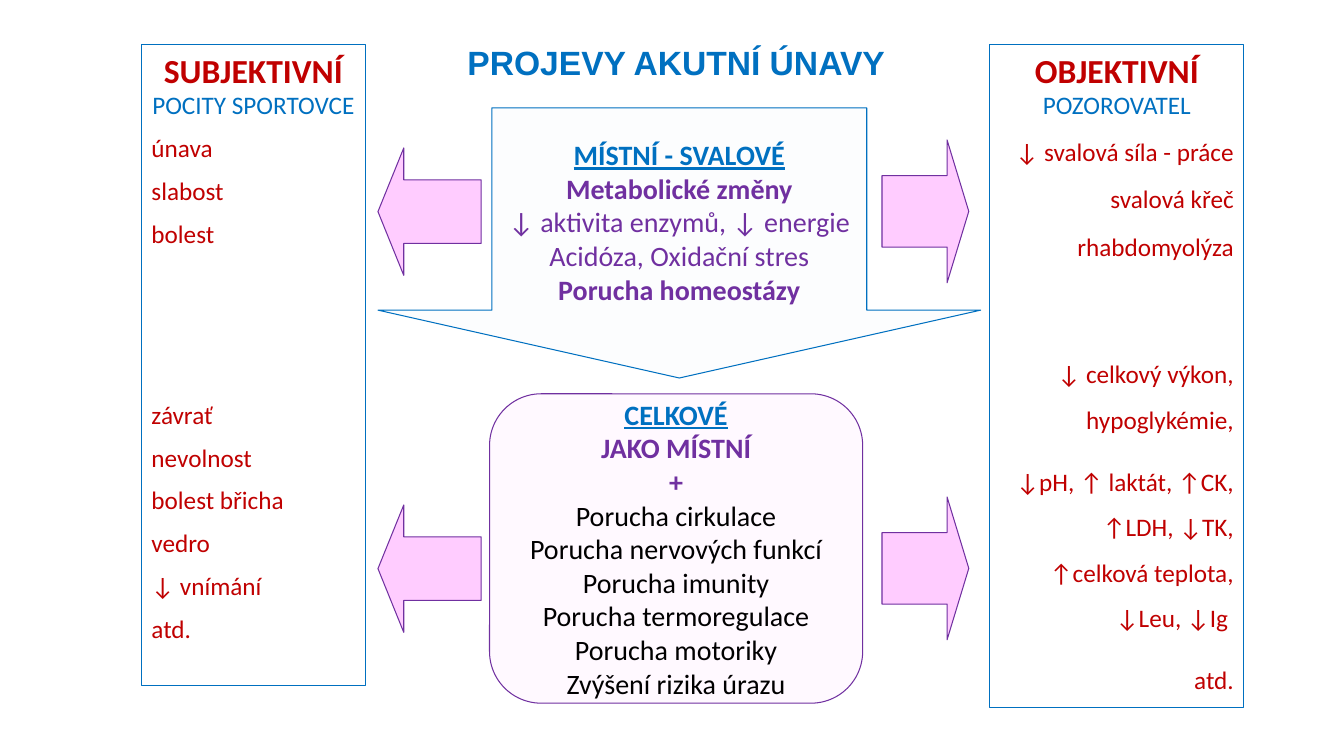
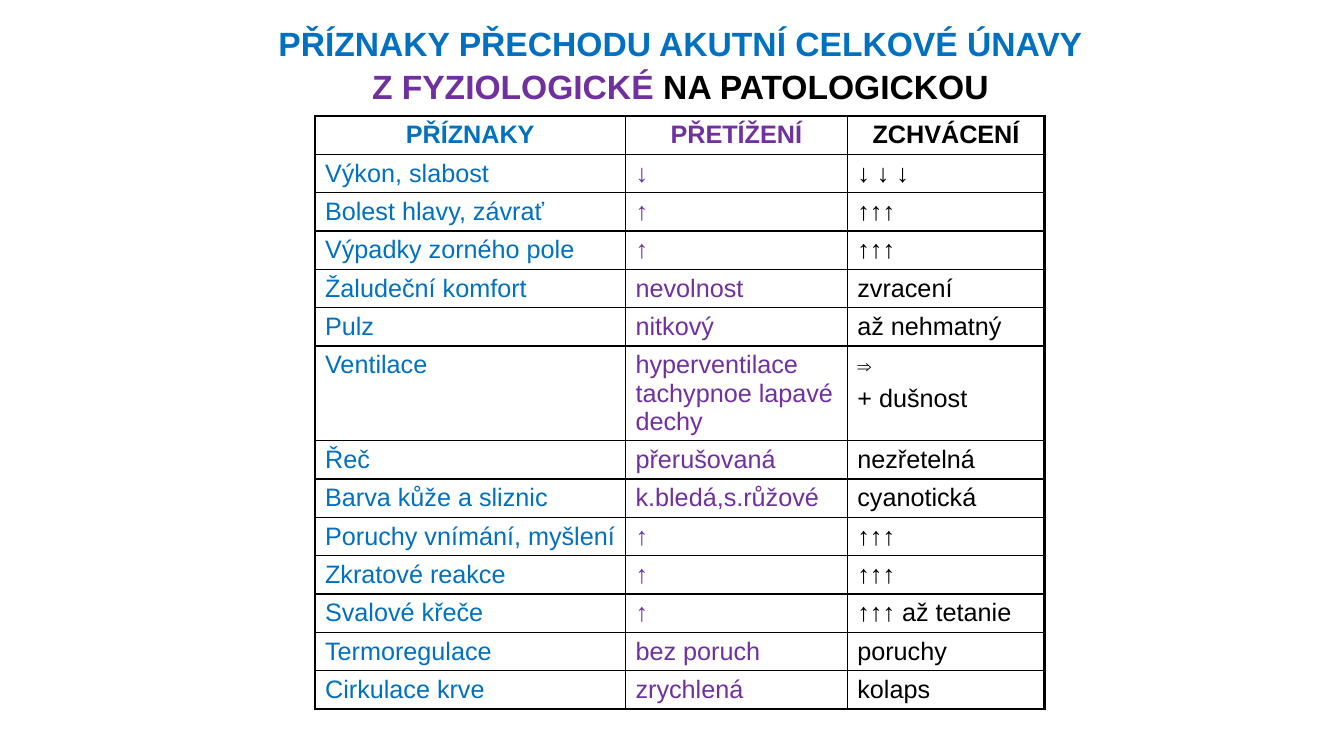
"""Build two slides on the signs of acute fatigue."""
from lxml import etree
from pptx import Presentation
from pptx.dml.color import RGBColor
from pptx.enum import shapes, text
from pptx.oxml.ns import qn
from pptx.util import Pt

COLORS = {"blue": "0070C0", "red": "C00000", "purple": "7030A0", "black": "000000",
          "pink": "FFCCFF", "ice": "DEEBF7"}
RGB = {name: RGBColor.from_string(value) for name, value in COLORS.items()}
LEFT, CENTER, RIGHT = text.PP_ALIGN.LEFT, text.PP_ALIGN.CENTER, text.PP_ALIGN.RIGHT


def style(paragraph, size, color, bold=False, font="Calibri", align=CENTER, before=0, spacing=1.0):
    paragraph.alignment = align
    paragraph.space_before, paragraph.space_after = Pt(before), Pt(0)
    paragraph.line_spacing = spacing
    for run in paragraph.runs:
        run.font.name, run.font.size, run.font.bold = font, Pt(size), bold
        run.font.color.rgb = RGB[color]


def place(shape, left, top, width, height):
    shape.left, shape.top, shape.width, shape.height = Pt(left), Pt(top), Pt(width), Pt(height)
    shape.text_frame.word_wrap = True
    shape.text_frame.auto_size = text.MSO_AUTO_SIZE.NONE
    return shape.text_frame


deck = Presentation()
deck.slide_width, deck.slide_height = Pt(960), Pt(540)

fatigue = deck.slides.add_slide(deck.slide_layouts[3])
heading, subjective, objective = fatigue.placeholders

title = place(heading, 312, 28, 342, 32)
title.text = "PROJEVY AKUTNÍ ÚNAVY"
style(title.paragraphs[0], 24, "blue", True, "Arial")

panels = [
    (subjective, (101, 31.7, 160, 458), LEFT, [
        ("SUBJEKTIVNÍ", 0, 1), ("POCITY SPORTOVCE", 0, 1),
        ("únava", 9, 1), ("slabost", 9, 1), ("bolest", 9, 1),
        ("závrať", 107.5, 1), ("nevolnost", 9, 1), ("bolest břicha", 9, 1),
        ("vedro", 9, 1), ("↓ vnímání", 9, 1), ("atd.", 9, 1)]),
    (objective, (707, 31.7, 181.5, 474), RIGHT, [
        ("OBJEKTIVNÍ", 0, 1), ("POZOROVATEL", 0, 1),
        ("↓ svalová síla - práce", 12, 1), ("svalová křeč", 12, 1), ("rhabdomyolýza", 12, 1),
        ("↓ celkový výkon, hypoglykémie,", 59, 1.5),
        ("↓pH, ↑ laktát, ↑CK, ↑LDH, ↓TK, ↑celková teplota, ↓Leu, ↓Ig ", 12, 1.5),
        ("atd.", 12, 1.5)]),
]
for panel, box, align, signs in panels:
    frame = place(panel, *box)
    panel.line.color.rgb, panel.line.width = RGB["blue"], Pt(0.75)
    frame.text = "\n".join(sign for sign, before, spacing in signs)
    for row, (paragraph, (sign, before, spacing)) in enumerate(zip(frame.paragraphs, signs)):
        style(paragraph, 24 if row == 0 else 18, "blue" if row == 1 else "red", row == 0,
              align=CENTER if row < 2 else align, before=before, spacing=spacing)
        props = paragraph._p.get_or_add_pPr()
        props.set("marL", "0")
        props.set("indent", "0")
        etree.SubElement(props, qn("a:buNone"))

causes = [
    (shapes.MSO_SHAPE.DOWN_ARROW, (270, 77, 430.5, 193), (0.622, 0.251), "ice", 8, "blue", [
        ("MÍSTNÍ - SVALOVÉ", "blue", True), ("Metabolické změny", "purple", True),
        ("↓ aktivita enzymů, ↓ energie", "purple", False),
        ("Acidóza, Oxidační stres", "purple", False), ("Porucha homeostázy", "purple", True)]),
    (shapes.MSO_SHAPE.ROUNDED_RECTANGLE, (349.7, 281.3, 266.5, 221), (0.167,), "pink", 10, "purple", [
        ("CELKOVÉ", "blue", True), ("JAKO MÍSTNÍ", "purple", True), ("+", "purple", True),
        ("Porucha cirkulace", "black", False), ("Porucha nervových funkcí", "black", False),
        ("Porucha imunity", "black", False), ("Porucha termoregulace", "black", False),
        ("Porucha motoriky", "black", False), ("Zvýšení rizika úrazu", "black", False)]),
]
effects = [(kind, (left, top + shift, width, height), (0.5, 0.25), "pink", 100, "purple", [])
           for kind, left, top, width, height in [
               (shapes.MSO_SHAPE.LEFT_ARROW, 270, 105.7, 73.7, 91),
               (shapes.MSO_SHAPE.RIGHT_ARROW, 630, 100, 62, 102)]
           for shift in (0, 255)]
for kind, box, adjustments, fill, opacity, outline, lines in causes + effects:
    block = fatigue.shapes.add_shape(kind, *map(Pt, box))
    block.shadow.inherit = False
    for index, value in enumerate(adjustments):
        block.adjustments[index] = value
    block.fill.solid()
    block.fill.fore_color.rgb = RGB[fill]
    if opacity < 100:
        tint = block._element.spPr.find(f"{qn('a:solidFill')}/{qn('a:srgbClr')}")
        etree.SubElement(tint, qn("a:alpha"), val=str(opacity * 1000))
    block.line.color.rgb, block.line.width = RGB[outline], Pt(0.75)
    if lines:
        frame = block.text_frame
        frame.word_wrap = False
        frame.vertical_anchor = text.MSO_ANCHOR.MIDDLE
        frame.text = "\n".join(line for line, color, bold in lines)
        for paragraph, (line, color, bold) in zip(frame.paragraphs, lines):
            style(paragraph, 20, color, bold)
        frame.paragraphs[0].runs[0].font.underline = True

transition = deck.slides.add_slide(deck.slide_layouts[5])
title = place(transition.shapes.title, 168.5, 15, 635, 62.6)
title.text = "PŘÍZNAKY PŘECHODU AKUTNÍ CELKOVÉ ÚNAVY\nZ FYZIOLOGICKÉ "
title.paragraphs[1].add_run().text = "NA PATOLOGICKOU"
for paragraph, color, before in zip(title.paragraphs, ("blue", "purple"), (0, 2)):
    style(paragraph, 24, color, True, "Arial", before=before)
title.paragraphs[1].runs[1].font.color.rgb = RGB["black"]

symptoms = [
    ("PŘÍZNAKY", "PŘETÍŽENÍ", "ZCHVÁCENÍ"),
    ("Výkon, slabost", "↓", "↓ ↓ ↓"),
    ("Bolest hlavy, závrať", "↑", "↑↑↑"),
    ("Výpadky zorného pole", "↑", "↑↑↑"),
    ("Žaludeční komfort", "nevolnost", "zvracení"),
    ("Pulz", "nitkový", "až nehmatný"),
    ("Ventilace", "hyperventilace tachypnoe lapavé dechy", "⇒\n+ dušnost"),
    ("Řeč", "přerušovaná", "nezřetelná"),
    ("Barva kůže a sliznic", "k.bledá,s.růžové", "cyanotická"),
    ("Poruchy vnímání, myšlení", "↑", "↑↑↑"),
    ("Zkratové reakce", "↑", "↑↑↑"),
    ("Svalové křeče", "↑", "↑↑↑ až tetanie"),
    ("Termoregulace", "bez poruch", "poruchy"),
    ("Cirkulace krve", "zrychlená", "kolaps"),
]
widths = (221.8, 158.4, 141.1)
last_row, last_column = len(symptoms) - 1, len(widths) - 1
table = transition.shapes.add_table(len(symptoms), len(widths), Pt(225), Pt(82.8),
                                    Pt(sum(widths)), Pt(424)).table
table.first_row = table.horz_banding = False
for column, width in zip(table.columns, widths):
    column.width = Pt(width)
for r, symptom in enumerate(symptoms):
    table.rows[r].height = Pt(67.5 if symptom[0] == "Ventilace" else 27.4)
    for c, (words, color) in enumerate(zip(symptom, ("blue", "purple", "black"))):
        cell = table.cell(r, c)
        cell.fill.background()
        cell.text_frame.text = words
        for index, paragraph in enumerate(cell.text_frame.paragraphs):
            style(paragraph, 18, color, r == 0, "Arial", LEFT if r else CENTER, 3.6 * index)
        if words.startswith("⇒"):
            implies = cell.text_frame.paragraphs[0]
            implies.add_run().text = " "
            style(implies, 18, color, font="Arial", align=LEFT)
            implies.runs[0].font.size, implies.runs[0].font.bold = Pt(14), True
        outer = {"lnL": c == 0, "lnR": c == last_column, "lnT": r == 0, "lnB": r == last_row}
        for index, (edge, thick) in enumerate(outer.items()):
            border = etree.Element(qn(f"a:{edge}"), w=str(Pt(2.25 if thick else 1)))
            paint = etree.SubElement(border, qn("a:solidFill"))
            etree.SubElement(paint, qn("a:srgbClr"), val=COLORS["black"])
            cell._tc.get_or_add_tcPr().insert(index, border)

deck.save("out.pptx")
